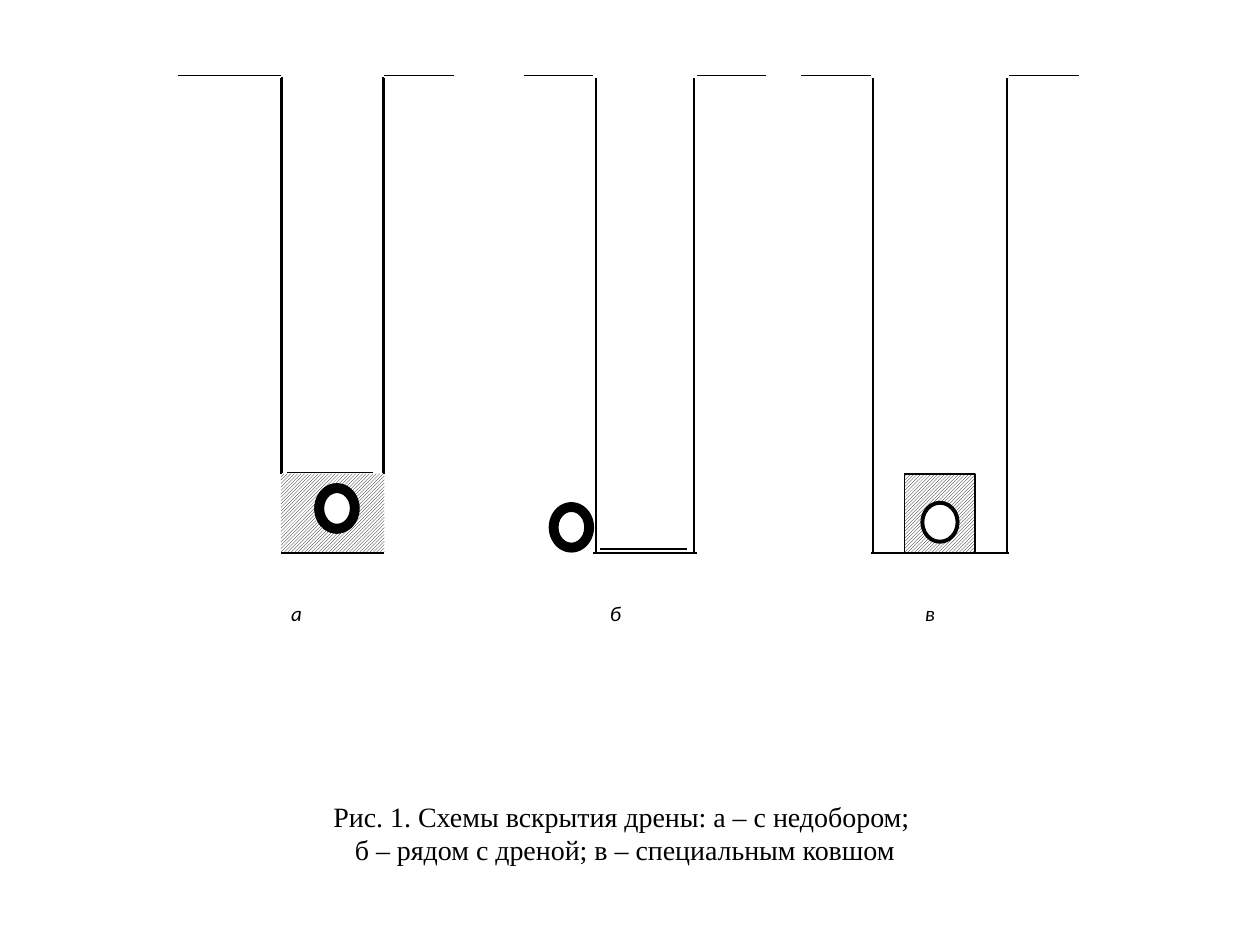
from dataclasses import dataclass

from lxml import etree
from pptx import Presentation
from pptx.dml.color import RGBColor
from pptx.enum import dml, shapes, text
from pptx.oxml.ns import qn
from pptx.util import Inches, Pt


@dataclass(frozen=True)
class Theme:
    ink: RGBColor = RGBColor(0, 0, 0)
    paper: RGBColor = RGBColor(255, 255, 255)
    caption_font: str = "Times New Roman"
    label_font: str = "Calibri"
    caption_size: Pt = Pt(16)
    label_size: Pt = Pt(12)
    thin: Pt = Pt(0.75)
    normal: Pt = Pt(1)
    thick: Pt = Pt(2.25)


THEME = Theme()
GROUND, FLOOR = 0.6, 4.39
COVER_TOP = 3.76  # top of the soil left above the drain
WALL_TOP = GROUND + 0.02


def draw_line(slide, x1, y1, x2, y2, width=THEME.normal):
    line = slide.shapes.add_connector(
        shapes.MSO_CONNECTOR.STRAIGHT, Inches(x1), Inches(y1), Inches(x2), Inches(y2))
    line.line.color.rgb = THEME.ink
    line.line.width = width
    etree.SubElement(line._element.spPr, qn("a:effectLst"))


def draw_shape(slide, kind, box, fill=None, outline=None):
    """Preset shape; without a fill colour it is hatched as soil."""
    shape = slide.shapes.add_shape(kind, *map(Inches, box))
    shape.shadow.inherit = False
    if fill is None:
        shape.fill.patterned()
        shape.fill.pattern = dml.MSO_PATTERN.LIGHT_UPWARD_DIAGONAL
        shape.fill.fore_color.rgb = THEME.ink
        shape.fill.back_color.rgb = THEME.paper
    else:
        shape.fill.solid()
        shape.fill.fore_color.rgb = fill
    if outline is None:
        shape.line.fill.background()
    else:
        shape.line.color.rgb = THEME.ink
        shape.line.width = outline
    return shape


def draw_pipe(slide, left, top):
    box = (left, top, 0.35, 0.39)
    pipe = draw_shape(slide, shapes.MSO_SHAPE.DONUT, box, THEME.ink, THEME.thin)
    pipe.adjustments[0] = 0.194


def draw_ground(slide, left, right, left_run=0.55, right_run=0.55):
    draw_line(slide, left - left_run, GROUND, left, GROUND)
    draw_line(slide, right, GROUND, right + right_run, GROUND)


def draw_walls(slide, left, right, top, bottom):
    for x in (left, right):
        draw_line(slide, x, top, x, bottom)


def draw_shallow_trench(slide, left, width):
    """а: digging stops above the drain."""
    right = left + width
    draw_ground(slide, left, right, left_run=0.82)
    draw_shape(slide, shapes.MSO_SHAPE.RECTANGLE,
               (left, COVER_TOP, width, FLOOR - COVER_TOP))
    draw_line(slide, left, FLOOR, right, FLOOR, THEME.thin)
    draw_walls(slide, left, right, WALL_TOP, COVER_TOP)
    # Inner lining of the trench
    draw_walls(slide, left + 0.01, right - 0.01, WALL_TOP - 0.01, COVER_TOP - 0.01)
    draw_line(slide, left + 0.05, COVER_TOP - 0.01, right - 0.09, COVER_TOP - 0.01)
    # Drain in the remaining soil
    pipe_left, pipe_top = left + 0.27, COVER_TOP + 0.08
    draw_shape(slide, shapes.MSO_SHAPE.OVAL, (pipe_left, pipe_top, 0.34, 0.39),
               THEME.paper, THEME.thin)
    draw_pipe(slide, pipe_left, pipe_top)


def draw_side_trench(slide, left, width):
    """б: the trench runs beside the drain."""
    right = left + width
    draw_ground(slide, left, right)
    draw_walls(slide, left + 0.02, right - 0.02, WALL_TOP, FLOOR)
    draw_line(slide, left, FLOOR, right, FLOOR)
    draw_line(slide, left + 0.05, FLOOR - 0.03, right - 0.08, FLOOR - 0.03)
    draw_pipe(slide, left - 0.35, FLOOR - 0.4)


def draw_bucket_trench(slide, left, width):
    """в: a special bucket leaves a block of soil around the drain."""
    right, block_width = left + width, 0.56
    block_left = left + (width - block_width) / 2
    block_right = block_left + block_width
    draw_ground(slide, left, right)
    draw_walls(slide, left + 0.02, right - 0.02, WALL_TOP, FLOOR)
    draw_shape(slide, shapes.MSO_SHAPE.RECTANGLE,
               (block_left, COVER_TOP, block_width, FLOOR - COVER_TOP),
               outline=THEME.normal)
    draw_shape(slide, shapes.MSO_SHAPE.OVAL,
               (block_left + 0.14, COVER_TOP + 0.23, 0.28, 0.31),
               THEME.paper, THEME.thick)
    draw_line(slide, left, FLOOR, block_left, FLOOR)
    draw_line(slide, block_right, FLOOR, right, FLOOR)


def add_labels(slide, box, letters, tab_stops):
    """One row of scheme letters, spaced by tab stops."""
    frame = slide.shapes.add_textbox(*map(Inches, box)).text_frame
    frame.word_wrap = True
    frame.margin_left = frame.margin_right = Inches(0.08)
    frame.margin_top = frame.margin_bottom = Inches(0.04)
    row = frame.paragraphs[0]
    row.text = "\t".join(letters)
    row.line_spacing, row.space_after = 1.15, Pt(10)
    row.font.name, row.font.size = THEME.label_font, THEME.label_size
    row.font.italic = True
    row.font.color.rgb = THEME.ink
    tabs = etree.Element(qn("a:tabLst"))
    for stop in tab_stops:
        etree.SubElement(tabs, qn("a:tab"), pos=str(Inches(stop)), algn="l")
    row._p.pPr.find(qn("a:defRPr")).addprevious(tabs)


def set_caption(slide, box, wording):
    caption = slide.shapes.title
    caption.left, caption.top, caption.width, caption.height = map(Inches, box)
    frame = caption.text_frame
    frame.text = wording
    frame.vertical_anchor = text.MSO_ANCHOR.MIDDLE
    line = frame.paragraphs[0]
    line.alignment = text.PP_ALIGN.CENTER
    line.font.name, line.font.size = THEME.caption_font, THEME.caption_size
    line.font.color.rgb = THEME.ink


def main():
    deck = Presentation()
    deck.slide_width, deck.slide_height = Inches(10), Inches(7.5)
    slide = deck.slides.add_slide(deck.slide_layouts[5])
    set_caption(slide, (0.46, 6.23, 9, 0.76),
                "Рис. 1. Схемы вскрытия дрены: а – с недобором; \v"
                "б – рядом с дреной; в – специальным ковшом")
    draw_shallow_trench(slide, 2.23, 0.82)
    draw_side_trench(slide, 4.71, 0.82)
    draw_bucket_trench(slide, 6.91, 1.1)
    add_labels(slide, (2.23, 4.7, 5.78, 0.94), "абв", (2.53, 5.03))
    deck.save("out.pptx")


if __name__ == "__main__":
    main()
